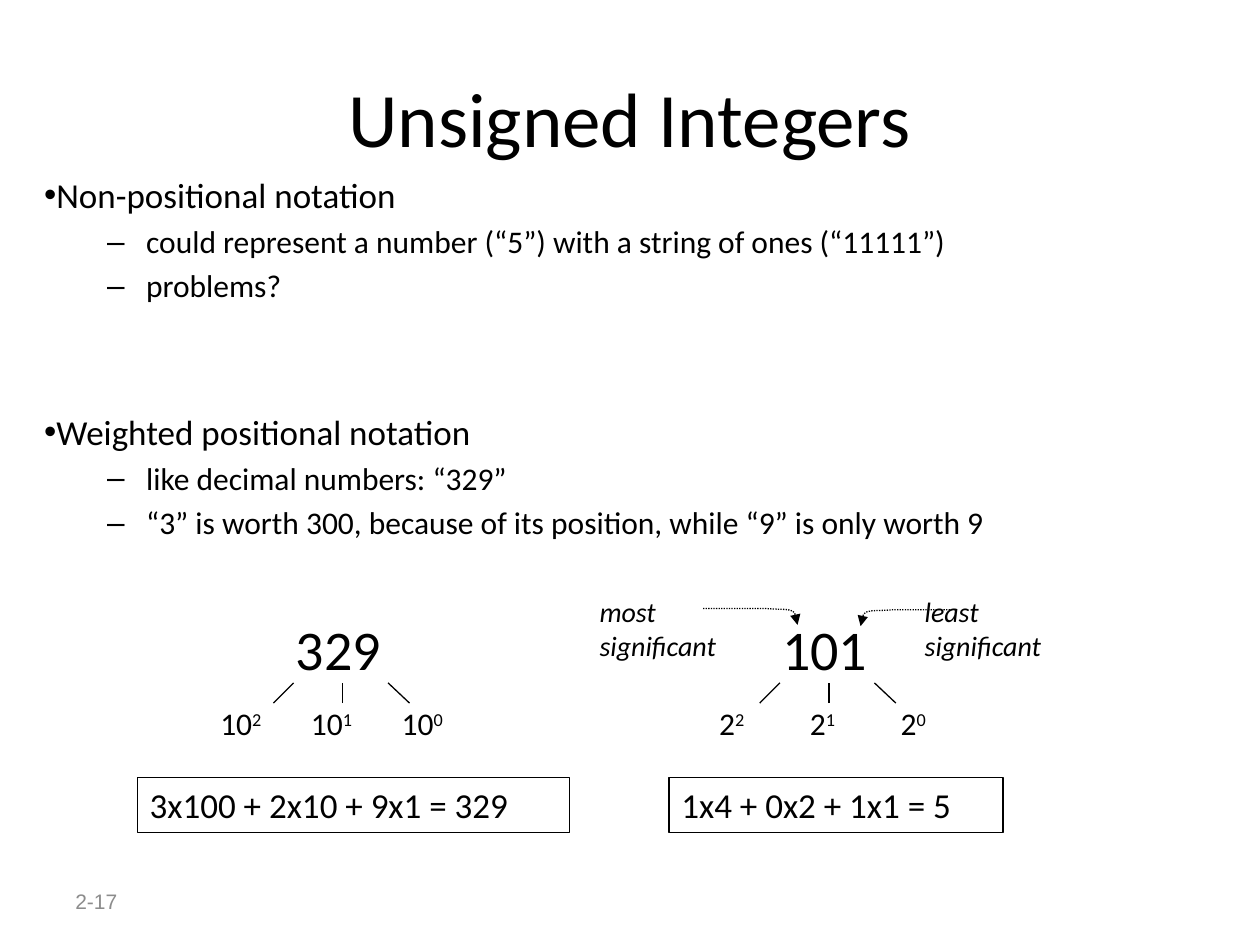
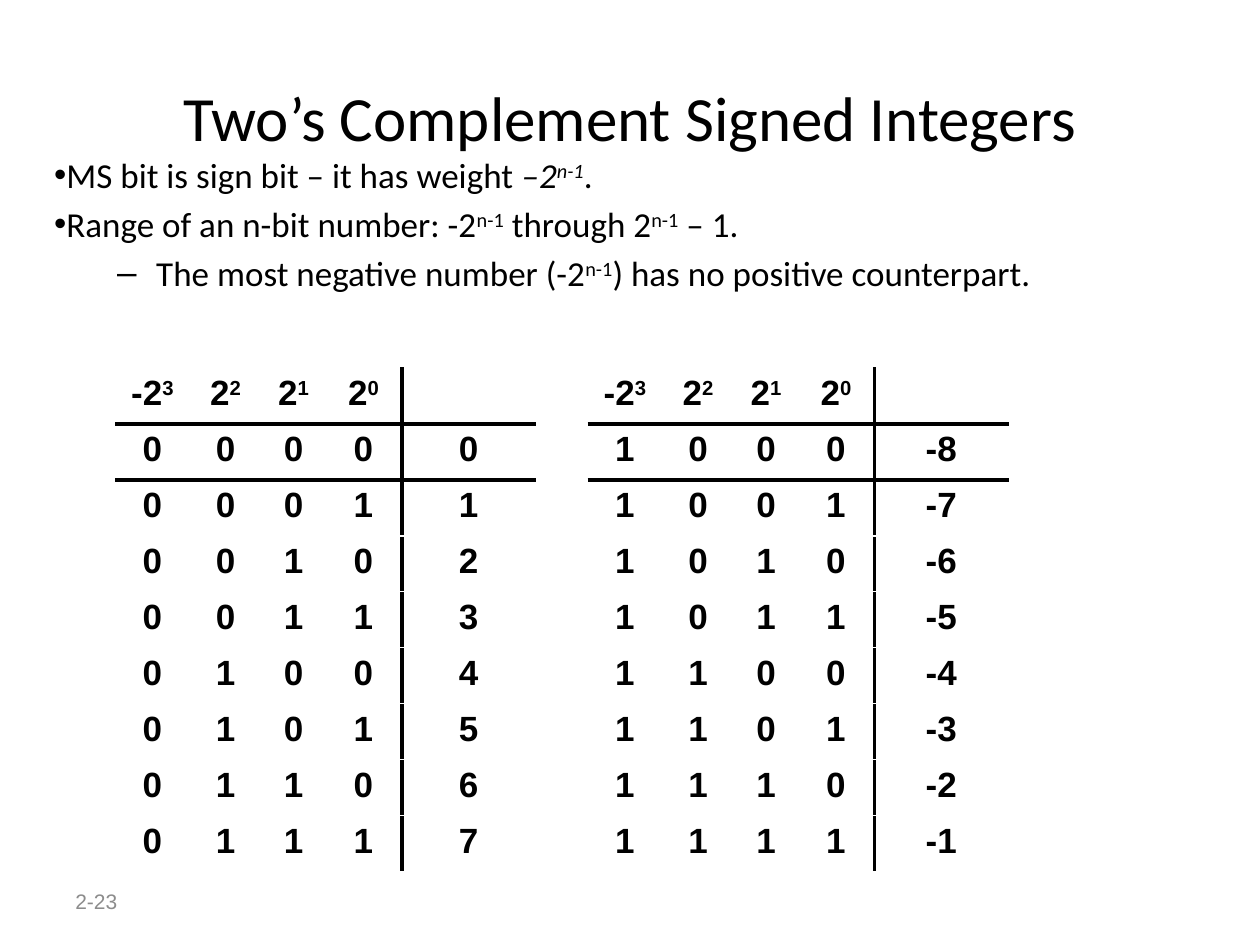
from collections import namedtuple
from dataclasses import dataclass

from lxml.etree import SubElement
from pptx import Presentation
from pptx.dml.color import RGBColor
from pptx.enum.dml import MSO_LINE
from pptx.enum.shapes import MSO_CONNECTOR, MSO_SHAPE
from pptx.enum.text import MSO_ANCHOR, MSO_AUTO_SIZE, PP_ALIGN
from pptx.oxml.ns import qn
from pptx.util import Inches, Pt

Box = namedtuple("Box", "left top width height")
Bullet = namedtuple("Bullet", "text level size space_before", defaults=(0, 20, None))


@dataclass(frozen=True)
class Theme:
    ink: RGBColor = RGBColor(0, 0, 0)
    muted: RGBColor = RGBColor(0x8C, 0x8C, 0x8C)
    body_font: str = "Calibri"
    table_font: str = "Arial"
    footer_size: int = 12
    note_size: int = 16
    small_size: int = 18
    text_size: int = 20
    number_size: int = 32
    thin: float = 0.75
    rule: float = 2.25


THEME = Theme()
TITLE_BOX = Box(0.5, 0.3, 9, 1.25)
FOOTER_BOX = Box(0.5, 6.95, 2.33, 0.4)
TABLE_COLUMNS = (0.58, 0.58, 0.5, 0.61, 1.06)
ARROW_CURVES = (
    ((0, 0), (0.08, 0), (0.38, 0), (0.5, 0)),
    ((0.5, 0), (0.61, 0.01), (0.66, 0), (0.71, 0.02)),
    ((0.71, 0.02), (0.75, 0.05), (0.74, 0.11), (0.75, 0.13)),
)


def inches(box):
    return [Inches(length) for length in box]


def place(shape, box):
    shape.left, shape.top, shape.width, shape.height = inches(box)


def write(para, text, size, font=THEME.body_font, color=THEME.ink):
    """Split text at "|"; a part led by "/" is italic, by "^" is superscript."""
    para.font.name = font
    para.font.size = Pt(size)
    para.font.color.rgb = color
    for part in text.split("|"):
        span = para.add_run()
        if part.startswith("/"):
            span.font.italic = True
            part = part[1:]
        if part.startswith("^"):
            span._r.get_or_add_rPr().set("baseline", "30000")
            part = part[1:]
        span.text = part


def add_text(shapes, box, lines, size, **style):
    label = shapes.add_textbox(*inches(box))
    frame = label.text_frame
    frame.word_wrap = True
    for index, line in enumerate(lines):
        para = frame.add_paragraph() if index else frame.paragraphs[0]
        write(para, line, size, **style)
    return label


def draw_line(line, width):
    line.color.rgb = THEME.ink
    line.width = Pt(width)


def add_page(deck, title, title_size, number):
    page = deck.slides.add_slide(deck.slide_layouts[1])
    place(page.shapes.title, TITLE_BOX)
    frame = page.shapes.title.text_frame
    frame.auto_size = MSO_AUTO_SIZE.NONE
    frame.vertical_anchor = MSO_ANCHOR.MIDDLE
    frame.paragraphs[0].alignment = PP_ALIGN.CENTER
    write(frame.paragraphs[0], title, title_size)
    footer = add_text(page.shapes, FOOTER_BOX, [number], THEME.footer_size,
                      font=THEME.table_font, color=THEME.muted)
    footer.text_frame.vertical_anchor = MSO_ANCHOR.MIDDLE
    return page


def fill_body(page, box, bullets):
    body = page.placeholders[1]
    place(body, box)
    frame = body.text_frame
    frame.auto_size = MSO_AUTO_SIZE.NONE
    for index, bullet in enumerate(bullets):
        para = frame.add_paragraph() if index else frame.paragraphs[0]
        para.level = bullet.level
        margin, indent, mark = ((0, 0, "•"), (0.81, -0.31, "–"))[bullet.level]
        properties = para._p.get_or_add_pPr()
        properties.set("marL", str(Inches(margin)))
        properties.set("indent", str(Inches(indent)))
        SubElement(properties, qn("a:buChar"), char=mark)
        if bullet.space_before is not None:
            para.space_before = Pt(bullet.space_before)
        write(para, bullet.text, bullet.size)


def add_weight_tree(page, box, number, base, label_offset, label_width):
    shapes = page.shapes.add_group_shape().shapes
    add_text(shapes, box, [number], THEME.number_size)
    for index, (inner, outer) in enumerate(((0.08, -0.08), (0.47, 0.47), (0.83, 1))):
        label = Box(box.left + label_offset + 0.72 * index, box.top + 0.71, label_width, 0.5)
        add_text(shapes, label, [f"{base}|^{2 - index}"], THEME.small_size)
        branch = shapes.add_connector(
            MSO_CONNECTOR.STRAIGHT,
            Inches(box.left + outer), Inches(box.top + 0.75),
            Inches(box.left + inner), Inches(box.top + 0.59))
        draw_line(branch.line, THEME.thin)
        SubElement(branch._element.spPr, qn("a:effectLst"))


def add_equation(page, box, text):
    frame_box = page.shapes.add_shape(MSO_SHAPE.RECTANGLE, *inches(box))
    frame_box.shadow.inherit = False
    frame_box.fill.background()
    draw_line(frame_box.line, THEME.thin)
    frame = frame_box.text_frame
    frame.vertical_anchor = MSO_ANCHOR.TOP
    frame.paragraphs[0].alignment = PP_ALIGN.LEFT
    write(frame.paragraphs[0], text, THEME.text_size)


def curve_points(curve, steps=6):
    for step in range(1, steps + 1):
        t = step / steps
        weights = ((1 - t) ** 3, 3 * t * (1 - t) ** 2, 3 * t ** 2 * (1 - t), t ** 3)
        yield tuple(sum(w * point[axis] for w, point in zip(weights, curve))
                    for axis in (0, 1))


def add_curved_arrow(page, left, top, direction):
    builder = page.shapes.build_freeform(Inches(left), Inches(top))
    points = [point for curve in ARROW_CURVES for point in curve_points(curve)]
    builder.add_line_segments(
        [(Inches(left + direction * x), Inches(top + y)) for x, y in points], close=False)
    arrow = builder.convert_to_shape()
    arrow.shadow.inherit = False
    arrow.fill.background()
    draw_line(arrow.line, THEME.thin)
    arrow.line.dash_style = MSO_LINE.ROUND_DOT
    SubElement(arrow.line._get_or_add_ln(), qn("a:tailEnd"), type="triangle")


def add_border(cell, side):
    edge = SubElement(cell._tc.get_or_add_tcPr(), qn(f"a:ln{side}"), w=str(Pt(THEME.rule)))
    fill = SubElement(edge, qn("a:solidFill"))
    SubElement(fill, qn("a:srgbClr"), val=str(THEME.ink))


def add_bit_table(page, box, values):
    rows = [["-2|^3", "2|^2", "2|^1", "2|^0", ""]]
    rows += [[*format(value % 16, "04b"), str(value)] for value in values]
    table = page.shapes.add_table(len(rows), len(TABLE_COLUMNS), *inches(box)).table
    table.first_row = table.horz_banding = False
    for column, width in zip(table.columns, TABLE_COLUMNS):
        column.width = Inches(width)
    for row_index, texts in enumerate(rows):
        table.rows[row_index].height = Inches(box.height / len(rows))
        for column_index, text in enumerate(texts):
            cell = table.cell(row_index, column_index)
            sides = {"L": column_index == 4, "R": column_index == 3,
                     "T": row_index == 1, "B": row_index == 0}
            for side, ruled in sides.items():
                if ruled:
                    add_border(cell, side)
            cell.fill.background()
            para = cell.text_frame.paragraphs[0]
            para.alignment = PP_ALIGN.CENTER
            para.font.bold = True
            if text:
                write(para, text, THEME.text_size, font=THEME.table_font)


def build_unsigned(deck):
    page = add_page(deck, "Unsigned Integers", 44, "2-17")
    small = THEME.small_size
    fill_body(page, Box(0.25, 1.33, 8.92, 3.75), [
        Bullet("Non-positional notation"),
        Bullet("could represent a number (“5”) with a string of ones (“11111”)", 1, small),
        Bullet("problems?", 1, small),
        Bullet("Weighted positional notation", space_before=61),
        Bullet("like decimal numbers: “329”", 1, small),
        Bullet("“3” is worth 300, because of its position, while “9” is only worth 9", 1, small),
    ])
    add_weight_tree(page, Box(2.25, 4.83, 0.94, 0.63), "329", "10", -0.6, 0.7)
    add_weight_tree(page, Box(6.11, 4.83, 0.94, 0.63), "101", "2", -0.5, 0.51)
    add_equation(page, Box(1.09, 6.17, 3.43, 0.44), "3x100 + 2x10 + 9x1 = 329")
    add_equation(page, Box(5.31, 6.17, 2.65, 0.44), "1x4 + 0x2 + 1x1 = 5")
    for left, rank in ((4.66, "most"), (7.24, "least")):
        add_text(page.shapes, Box(left, 4.67, 1.19, 0.64),
                 [f"/{rank}", "/significant"], THEME.note_size)
    add_curved_arrow(page, 5.58, 4.83, 1)
    add_curved_arrow(page, 7.58, 4.84, -1)


def build_signed(deck):
    page = add_page(deck, "Two’s Complement Signed Integers", 36, "2-23")
    fill_body(page, Box(0.33, 1.17, 9.08, 1.67), [
        Bullet("MS bit is sign bit – it has weight |/–2|/^n-1|."),
        Bullet("Range of an n-bit number: -2|^n-1| through 2|^n-1| – 1."),
        Bullet("The most negative number (-2|^n-1|) has no positive counterpart.", 1),
    ])
    add_bit_table(page, Box(0.92, 2.92, 3.33, 4), range(8))
    add_bit_table(page, Box(4.67, 2.92, 3.33, 4), range(-8, 0))


def main():
    deck = Presentation()
    deck.slide_width, deck.slide_height = Inches(10), Inches(7.5)
    build_unsigned(deck)
    build_signed(deck)
    deck.save("out.pptx")


if __name__ == "__main__":
    main()
